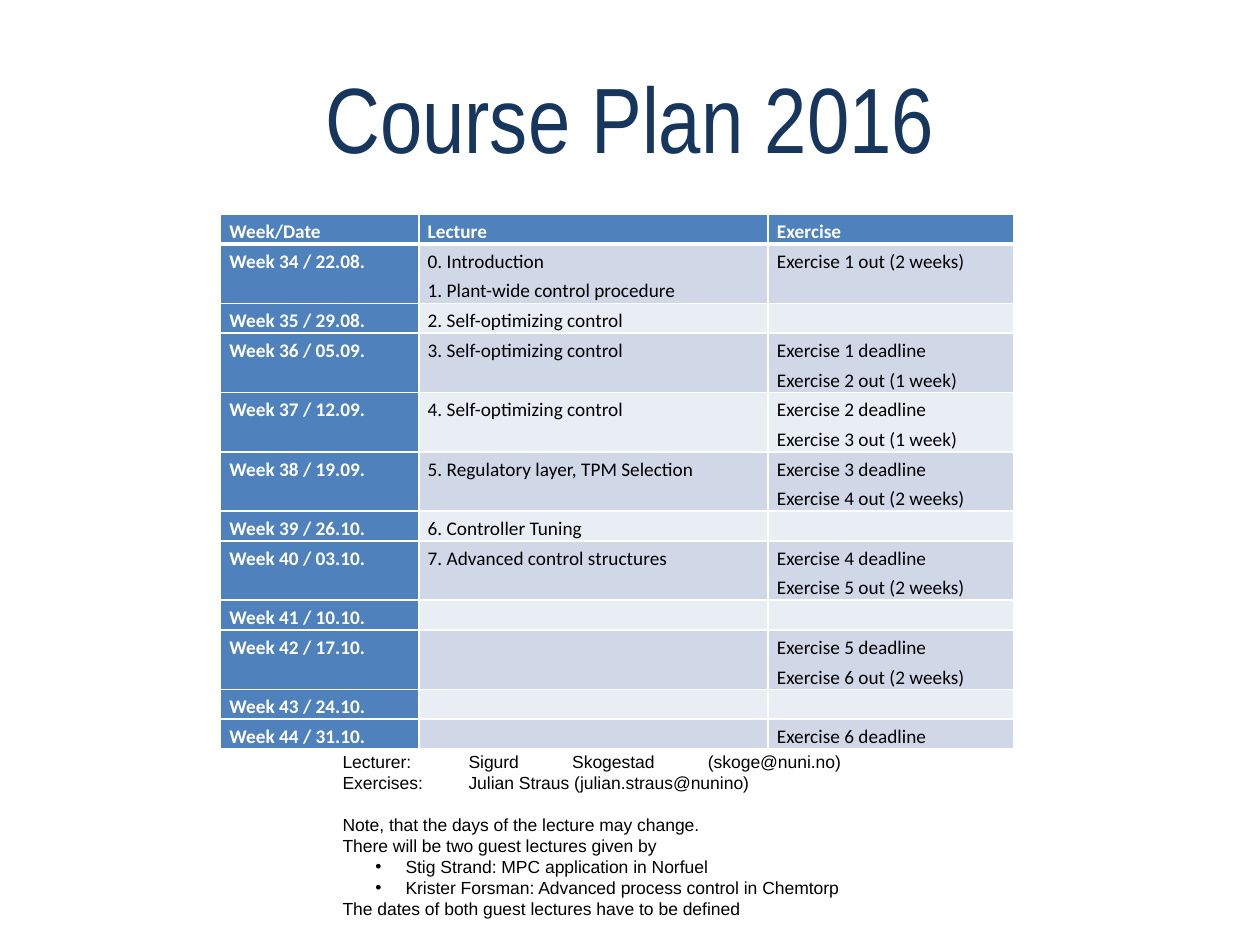
from lxml import etree
from pptx import Presentation
from pptx.dml.color import RGBColor
from pptx.enum.text import MSO_ANCHOR, PP_ALIGN
from pptx.oxml.ns import qn
from pptx.util import Inches, Pt

CENTER, JUSTIFY = PP_ALIGN.CENTER, PP_ALIGN.JUSTIFY
MIDDLE, TOP = MSO_ANCHOR.MIDDLE, MSO_ANCHOR.TOP
NAVY = RGBColor(0x17, 0x36, 0x5D)
BLUE = RGBColor(0x4F, 0x81, 0xBD)
BANDS = (RGBColor(0xD0, 0xD8, 0xE8), RGBColor(0xE9, 0xED, 0xF4))
WHITE = RGBColor(0xFF, 0xFF, 0xFF)
BLACK = RGBColor(0x00, 0x00, 0x00)

TITLE_FONT = {"name": "Arial Narrow", "size": Pt(53), "bold": False}
HEAD_FONT = {"name": "Calibri", "size": Pt(11), "bold": True}
BODY_FONT = {**HEAD_FONT, "bold": False}
NOTE_FONT = {"name": "Arial", "size": Pt(10)}
CELL_FORMAT = {"margin_left": Inches(0.07), "margin_right": Inches(0.07),
               "margin_top": 0, "margin_bottom": 0, "vertical_anchor": TOP}

TITLE_BOX = (0.5, 0.3, 9, 1.25)
PLAN_BOX = (1.75, 1.7, 6.3, 4.23)
NOTES_BOX = (2.62, 5.91, 4.15, 1.75)
COLUMN_SHARES = (0.25, 0.44, 0.31)

PLAN = [
    ("Week/Date", "Lecture", "Exercise"),
    ("Week 34 / 22.08.", "0. Introduction\n1. Plant-wide control procedure", "Exercise 1 out (2 weeks)"),
    ("Week 35 / 29.08.", "2. Self-optimizing control", ""),
    ("Week 36 / 05.09.", "3. Self-optimizing control", "Exercise 1 deadline\nExercise 2 out (1 week)"),
    ("Week 37 / 12.09.", "4. Self-optimizing control", "Exercise 2 deadline\nExercise 3 out (1 week)"),
    ("Week 38 / 19.09.", "5. Regulatory layer, TPM Selection", "Exercise 3 deadline\nExercise 4 out (2 weeks)"),
    ("Week 39 / 26.10.", "6. Controller Tuning", ""),
    ("Week 40 / 03.10.", "7. Advanced control structures", "Exercise 4 deadline\nExercise 5 out (2 weeks)"),
    ("Week 41 / 10.10.", "", ""),
    ("Week 42 / 17.10.", "", "Exercise 5 deadline\nExercise 6 out (2 weeks)"),
    ("Week 43 / 24.10.", "", ""),
    ("Week 44 / 31.10.", "", "Exercise 6 deadline"),
]
NOTES = [
    ("Lecturer:\tSigurd Skogestad (skoge@nuni.no)\vExercises:\tJulian Straus (julian.straus@nunino)", {}),
    ("Note, that the days of the lecture may change.", {"space_before": Pt(12)}),
    ("There will be two guest lectures given by", {}),
    ("Stig Strand: MPC application in Norfuel", {"level": 1}),
    ("Krister Forsman: Advanced process control in Chemtorp", {"level": 1}),
    ("The dates of both guest lectures have to be defined", {}),
]


def apply(target, values):
    for name, value in values.items():
        setattr(target, name, value)


def style_para(para, font, color, **layout):
    apply(para, layout)
    for span in para.runs:
        apply(span.font, font)
        span.font.color.rgb = color
    size = str(int(font["size"].pt * 100))
    for line_break in para._p.findall(qn("a:br")):
        etree.SubElement(line_break, qn("a:rPr"), sz=size)
    if not para.runs:
        etree.SubElement(para._p, qn("a:endParaRPr"), sz=size)


def add_bullet(para):
    properties = para._p.get_or_add_pPr()
    properties.set("marL", str(Inches(0.5)))
    properties.set("indent", str(-Inches(0.24)))
    etree.SubElement(properties, qn("a:buFont"), typeface="Arial")
    etree.SubElement(properties, qn("a:buChar"), char="•")


def add_borders(cell, widths):
    properties = cell._tc.get_or_add_tcPr()
    for side, width in widths.items():
        line = etree.SubElement(properties, qn(f"a:ln{side}"), w=str(Pt(width)))
        fill = etree.SubElement(line, qn("a:solidFill"))
        etree.SubElement(fill, qn("a:srgbClr"), val=str(WHITE))


def place_title(page, box):
    title = page.shapes.title
    apply(title, dict(zip(("left", "top", "width", "height"), map(Inches, box))))
    title.text_frame.text = "Course Plan 2016"
    title.text_frame.vertical_anchor = MIDDLE
    style_para(title.text_frame.paragraphs[0], TITLE_FONT, NAVY, alignment=CENTER)


def place_plan(page, box):
    left, top, width, height = map(Inches, box)
    table = page.shapes.add_table(len(PLAN), len(COLUMN_SHARES), left, top, width, height).table
    for column, share in zip(table.columns, COLUMN_SHARES):
        column.width = int(width * share)
    line_counts = [max(text.count("\n") + 1 for text in texts) for texts in PLAN]
    for r, texts in enumerate(PLAN):
        table.rows[r].height = height * line_counts[r] // sum(line_counts)
        for c, text in enumerate(texts):
            cell = table.cell(r, c)
            heading = r == 0 or c == 0
            cell.text = text
            apply(cell, CELL_FORMAT)
            add_borders(cell, {"L": 1, "R": 1, "T": 3 if r == 1 else 1, "B": 3 if r == 0 else 1})
            cell.fill.solid()
            cell.fill.fore_color.rgb = BLUE if heading else BANDS[(r - 1) % 2]
            for para in cell.text_frame.paragraphs:
                style_para(para, HEAD_FONT if heading else BODY_FONT,
                           WHITE if heading else BLACK, alignment=JUSTIFY, line_spacing=1.25)


def place_notes(page, box):
    frame = page.shapes.add_textbox(*map(Inches, box)).text_frame
    frame.word_wrap = True
    for i, (text, layout) in enumerate(NOTES):
        para = frame.add_paragraph() if i else frame.paragraphs[0]
        para.text = text
        style_para(para, NOTE_FONT, BLACK, alignment=JUSTIFY, **layout)
        if para.level:
            add_bullet(para)


def main():
    deck = Presentation()
    apply(deck, {"slide_width": Inches(10), "slide_height": Inches(7.5)})
    page = deck.slides.add_slide(deck.slide_layouts[5])
    place_title(page, TITLE_BOX)
    place_plan(page, PLAN_BOX)
    place_notes(page, NOTES_BOX)
    deck.save("out.pptx")


if __name__ == "__main__":
    main()
